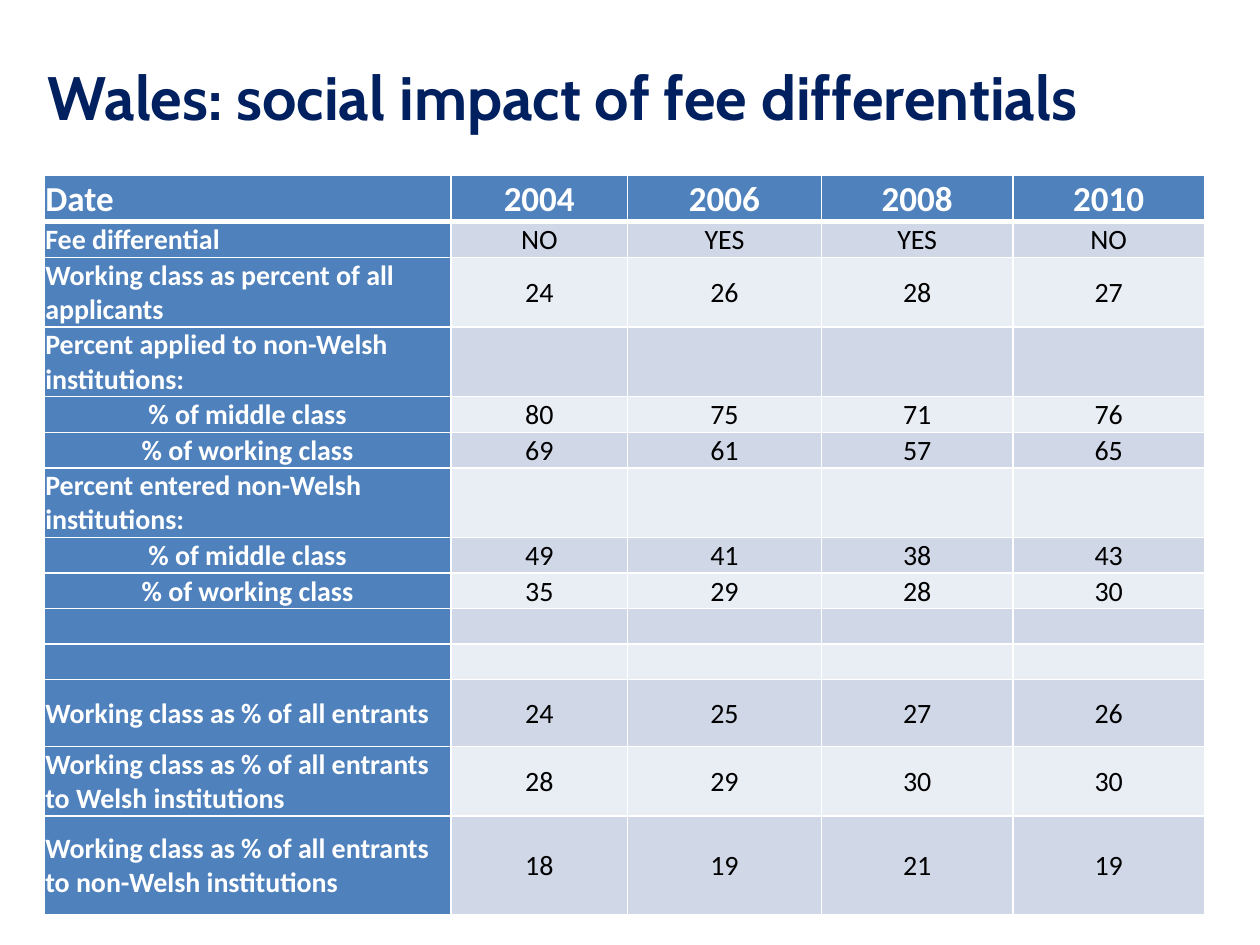
from lxml.etree import SubElement
from pptx import Presentation
from pptx.dml.color import RGBColor
from pptx.enum.text import MSO_ANCHOR, PP_ALIGN
from pptx.oxml.ns import qn
from pptx.util import Inches, Pt

THEME = {
    "title": "002060", "head": "4F81BD", "bands": ("D0D8E8", "E9EDF4"),
    "light": "FFFFFF", "dark": "000000",
    "title_font": "Cabin", "font": "Calibri",
    "title_size": 35, "head_size": 20, "size": 16,
}

TITLE = "Wales: social impact of fee differentials"
BLANK = ("",) * 4
HEAD = ("Date", "2004", "2006", "2008", "2010")
MIDDLE, WORKING = "% of middle class", "% of working class"
ROWS = [  # height, label, values
    (0.37, HEAD[0], HEAD[1:]),
    (0.27, "Fee differential", ("NO", "YES", "YES", "NO")),
    (0.53, "Working class as percent of all applicants", (24, 26, 28, 27)),
    (0.53, "Percent applied to non-Welsh institutions:", BLANK),
    (0.27, MIDDLE, (80, 75, 71, 76)),
    (0.27, WORKING, (69, 61, 57, 65)),
    (0.53, "Percent entered non-Welsh institutions:", BLANK),
    (0.27, MIDDLE, (49, 41, 38, 43)),
    (0.27, WORKING, (35, 29, 28, 30)),
    (0.27, "", BLANK),
    (0.27, "", BLANK),
    (0.53, "Working class as % of all entrants", (24, 25, 27, 26)),
    (0.53, "Working class as % of all entrants to Welsh institutions",
     (28, 29, 30, 30)),
    (0.78, "Working class as % of all entrants to non-Welsh institutions",
     (18, 19, 21, 19)),
]
COLS = (3.23, 1.4, 1.54, 1.52, 1.52)


def style(font, face, size, color, bold):
    font.name, font.size, font.bold = face, Pt(size), bold
    font.color.rgb = RGBColor.from_string(color)


def add_title(slide):
    title = slide.shapes.title
    title.left, title.top = Inches(0.28), Inches(0.3)
    title.width, title.height = Inches(9.45), Inches(0.93)
    frame = title.text_frame
    frame.text = TITLE
    frame.word_wrap = True
    frame.vertical_anchor = MSO_ANCHOR.MIDDLE
    para = frame.paragraphs[0]
    para.alignment = PP_ALIGN.LEFT
    style(para.runs[0].font, THEME["title_font"], THEME["title_size"],
          THEME["title"], True)


def add_edges(cell, base):
    """Draw white cell borders, with the bottom one base points wide."""
    props = cell._tc.get_or_add_tcPr()
    for side, width in (("L", 1), ("R", 1), ("T", 1), ("B", base)):
        line = SubElement(props, qn("a:ln" + side), w=str(Pt(width)))
        fill = SubElement(line, qn("a:solidFill"))
        SubElement(fill, qn("a:srgbClr"), val=THEME["light"])


def fill_cell(cell, value, row, col):
    head, label = row == 0, col == 0
    strong = head or label
    add_edges(cell, 3 if head else 1)
    cell.fill.solid()
    shade = THEME["head"] if strong else THEME["bands"][(row - 1) % 2]
    cell.fill.fore_color.rgb = RGBColor.from_string(shade)
    cell.margin_left = cell.margin_right = cell.margin_top = Inches(0.01)
    cell.margin_bottom = 0
    cell.vertical_anchor = MSO_ANCHOR.MIDDLE

    size = THEME["head_size"] if head else THEME["size"]
    para = cell.text_frame.paragraphs[0]
    if value == "":
        # An empty cell needs its own type size to keep the row low.
        SubElement(para._p, qn("a:endParaRPr"), sz=str(size * 100))
        return
    para.text = str(value)
    left = label and not para.text.startswith("%")
    para.alignment = PP_ALIGN.LEFT if left else PP_ALIGN.CENTER
    style(para.runs[0].font, THEME["font"], size,
          THEME["light"] if strong else THEME["dark"], strong)


def add_grid(slide):
    high = sum(row[0] for row in ROWS)
    table = slide.shapes.add_table(
        len(ROWS), len(COLS), Inches(0.35), Inches(1.39),
        Inches(sum(COLS)), Inches(high)).table
    table.first_col = True
    for col, width in enumerate(COLS):
        table.columns[col].width = Inches(width)
    for row, (height, label, values) in enumerate(ROWS):
        table.rows[row].height = Inches(height)
        for col, value in enumerate((label, *values)):
            fill_cell(table.cell(row, col), value, row, col)


def main():
    deck = Presentation()
    deck.slide_width, deck.slide_height = Inches(10), Inches(7.5)
    slide = deck.slides.add_slide(deck.slide_layouts[5])
    add_title(slide)
    add_grid(slide)
    deck.save("out.pptx")


if __name__ == "__main__":
    main()
